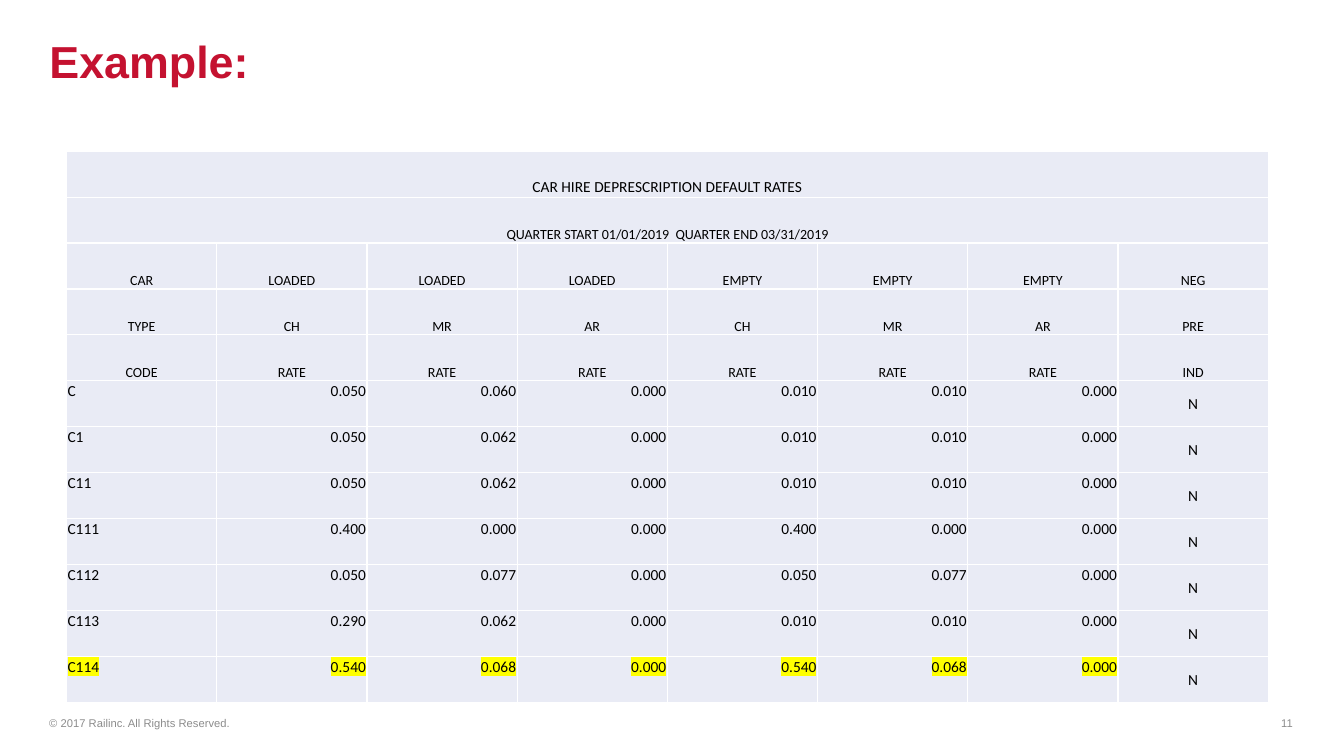
from dataclasses import dataclass

from lxml.etree import SubElement
from pptx import Presentation
from pptx.dml.color import RGBColor
from pptx.enum.text import MSO_ANCHOR as Anchor, PP_ALIGN as Align
from pptx.oxml.ns import qn
from pptx.util import Inches, Pt

COLORS = {
    "title": "C41230",
    "footer": "8C8C8C",
    "text": "000000",
    "cell": "E9EBF5",
    "border": "FFFFFF",
    "highlight": "FFFF00",
}


@dataclass
class Footer:
    text: str
    left: float
    width: float
    align: Align


@dataclass
class CellStyle:
    size: int
    align: Align
    anchor: Anchor


FOOTERS = [
    Footer("© 2017 Railinc. All Rights Reserved.", 0.39, 4.5, Align.LEFT),
    Footer("11", 9.92, 3, Align.RIGHT),
]

BANNER = CellStyle(11, Align.CENTER, Anchor.BOTTOM)
HEADING = CellStyle(10, Align.CENTER, Anchor.BOTTOM)
CODE = CellStyle(11, Align.LEFT, Anchor.TOP)
RATE = CellStyle(11, Align.RIGHT, Anchor.TOP)
FLAG = CellStyle(11, Align.CENTER, Anchor.MIDDLE)

BANNERS = [
    ("CAR HIRE DEPRESCRIPTION DEFAULT RATES", BANNER),
    ("QUARTER START 01/01/2019  QUARTER END 03/31/2019", HEADING),
]
HEADINGS = [
    ["CAR", "LOADED", "LOADED", "LOADED", "EMPTY", "EMPTY", "EMPTY", "NEG"],
    ["TYPE", "CH", "MR", "AR", "CH", "MR", "AR", "PRE"],
    ["CODE", "RATE", "RATE", "RATE", "RATE", "RATE", "RATE", "IND"],
]
RATES = [
    ("C", 0.05, 0.06, 0, 0.01, 0.01, 0),
    ("C1", 0.05, 0.062, 0, 0.01, 0.01, 0),
    ("C11", 0.05, 0.062, 0, 0.01, 0.01, 0),
    ("C111", 0.4, 0, 0, 0.4, 0, 0),
    ("C112", 0.05, 0.077, 0, 0.05, 0.077, 0),
    ("C113", 0.29, 0.062, 0, 0.01, 0.01, 0),
    ("C114", 0.54, 0.068, 0, 0.54, 0.068, 0),
]
HIGHLIGHTED_CODE = "C114"


def rgb(name: str) -> RGBColor:
    return RGBColor.from_string(COLORS[name])


def format_run(r, font: str, size: int, color: str, bold: bool = False) -> None:
    r.font.size = Pt(size)
    r.font.bold = bold
    r.font.color.rgb = rgb(color)
    r.font.name = font


def add_title(slide, text: str) -> None:
    sp = slide.shapes.title
    sp.left, sp.top, sp.width, sp.height = map(Inches, (0.39, 0.29, 10.22, 1.13))
    tf = sp.text_frame
    tf.text = text
    tf.vertical_anchor = Anchor.TOP
    tf.margin_top = Inches(0.1)
    p = tf.paragraphs[0]
    p.alignment = Align.LEFT
    p.line_spacing = 0.9
    format_run(p.runs[0], "Arial", 32, "title", bold=True)


def add_footer(slide, footer: Footer) -> None:
    sp = slide.shapes.add_textbox(
        Inches(footer.left), Inches(6.97), Inches(footer.width), Inches(0.4))
    tf = sp.text_frame
    tf.word_wrap = True
    tf.vertical_anchor = Anchor.MIDDLE
    tf.text = footer.text
    p = tf.paragraphs[0]
    p.alignment = footer.align
    format_run(p.runs[0], "Arial", 8, "footer")


def add_borders(cell) -> None:
    tc_pr = cell._tc.get_or_add_tcPr()
    for side in ("a:lnL", "a:lnR", "a:lnT", "a:lnB"):
        ln = SubElement(tc_pr, qn(side), w=str(Pt(1)))
        fill = SubElement(ln, qn("a:solidFill"))
        SubElement(fill, qn("a:srgbClr"), val=COLORS["border"])


def highlight(r) -> None:
    r_pr = r.font._element
    mark = SubElement(r_pr, qn("a:highlight"))
    SubElement(mark, qn("a:srgbClr"), val=COLORS["highlight"])
    r_pr.find(qn("a:latin")).addprevious(mark)


def fill_cell(cell, text: str, style: CellStyle, marked: bool = False) -> None:
    cell.text = text
    cell.vertical_anchor = style.anchor
    cell.margin_left = cell.margin_right = cell.margin_top = Inches(0.01)
    cell.margin_bottom = 0
    p = cell.text_frame.paragraphs[0]
    p.alignment = style.align
    format_run(p.runs[0], "Calibri", style.size, "text")
    if marked:
        highlight(p.runs[0])


def add_rate_table(slide) -> None:
    n_rows = len(BANNERS) + len(HEADINGS) + len(RATES)
    n_cols = len(HEADINGS[0])
    table = slide.shapes.add_table(
        n_rows, n_cols, Inches(0.66), Inches(1.5), Inches(11.92), Inches(5.47)).table
    table.first_row = table.horz_banding = False
    for cell in table.iter_cells():
        add_borders(cell)
        cell.fill.solid()
        cell.fill.fore_color.rgb = rgb("cell")

    # Full-width banner rows
    for row, (text, style) in enumerate(BANNERS):
        table.cell(row, 0).merge(table.cell(row, n_cols - 1))
        fill_cell(table.cell(row, 0), text, style)

    # Three-line column headings
    for row, labels in enumerate(HEADINGS, len(BANNERS)):
        for col, label in enumerate(labels):
            fill_cell(table.cell(row, col), label, HEADING)

    # Rates by car type
    for row, (code, *rates) in enumerate(RATES, len(BANNERS) + len(HEADINGS)):
        marked = code == HIGHLIGHTED_CODE
        fill_cell(table.cell(row, 0), code, CODE, marked)
        for col, rate in enumerate(rates, 1):
            fill_cell(table.cell(row, col), f"{rate:.3f}", RATE, marked)
        fill_cell(table.cell(row, n_cols - 1), "N", FLAG)


def main() -> None:
    prs = Presentation()
    prs.slide_width, prs.slide_height = Inches(13.33), Inches(7.5)
    slide = prs.slides.add_slide(prs.slide_layouts[5])
    for footer in FOOTERS:
        add_footer(slide, footer)
    add_title(slide, "Example:")
    add_rate_table(slide)
    prs.save("out.pptx")


if __name__ == "__main__":
    main()
